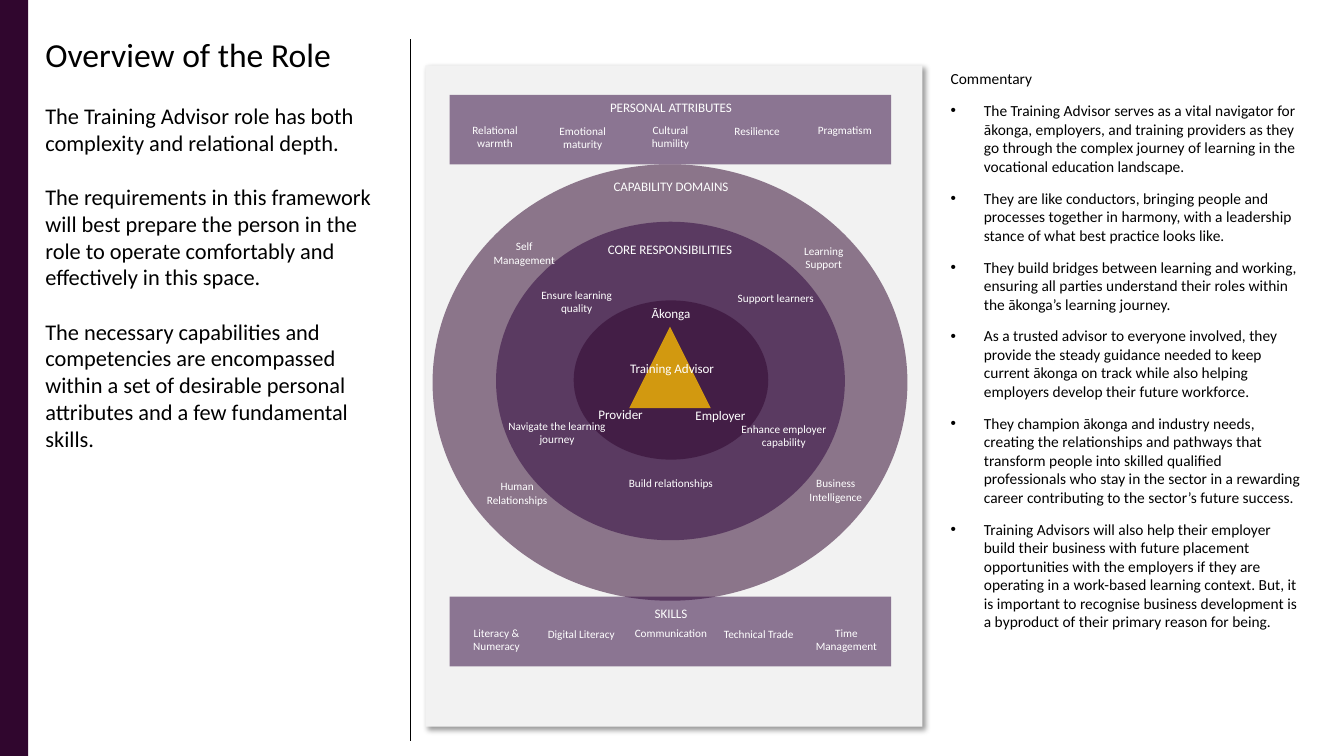
"""Build the Training Advisor role overview slide."""
from lxml import etree
from pptx import Presentation
from pptx import util as u
from pptx.dml.color import RGBColor
from pptx.enum import shapes, text
from pptx.oxml import ns

PX = 9144
FONT = "Calibri"


def add_box(kind, x, y, w, h, colour, alpha=100):
    sp = s.shapes.add_shape(kind, x * PX, y * PX, w * PX, h * PX)
    sp.shadow.inherit = False
    sp.fill.solid()
    sp.fill.fore_color.rgb = RGBColor.from_string(colour)
    sp.line.fill.background()
    if alpha < 100:
        clr = sp.fill._xPr.find(".//" + ns.qn("a:srgbClr"))
        etree.SubElement(clr, ns.qn("a:alpha"), val=str(alpha * 1000))
    return sp


def add_text(x, y, w, h, lines, size, colour="000000", align=text.PP_ALIGN.LEFT):
    sp = s.shapes.add_textbox(x * PX, y * PX, w * PX, h * PX)
    tf = sp.text_frame
    tf.word_wrap = True
    for i, line in enumerate(lines):
        p = tf.add_paragraph() if i else tf.paragraphs[0]
        p.alignment = align
        r = p.add_run()
        r.text = line
        r.font.size = u.Pt(size)
        r.font.name = FONT
        r.font.color.rgb = RGBColor.from_string(colour)
    return tf


prs = Presentation()
prs.slide_width, prs.slide_height = 1333 * PX, 750 * PX
s = prs.slides.add_slide(prs.slide_layouts[6])
RECT, OVAL = shapes.MSO_SHAPE.RECTANGLE, shapes.MSO_SHAPE.OVAL

add_box(RECT, 0, 0, 28, 750, "30062E")
panel = add_box(RECT, 422, 65, 493, 656, "F2F2F2")
effects = panel._element.spPr.find(ns.qn("a:effectLst"))
shadow = etree.SubElement(effects, ns.qn("a:outerShdw"), blurRad=str(u.Pt(4)),
                          dist=str(u.Pt(3)), dir="2700000", algn="tl", rotWithShape="0")
clr = etree.SubElement(shadow, ns.qn("a:srgbClr"), val="000000")
etree.SubElement(clr, ns.qn("a:alpha"), val="40000")

for x, y, w, h, colour in [
    (429, 163, 471, 433, "30062E"),
    (492, 220, 346, 316, "30063E"),
    (569, 298, 193, 158, "30062E"),
]:
    add_box(OVAL, x, y, w, h, colour, 53)

tf = add_text(45, 34, 335, 417, [
    "Overview of the Role",
    "The Training Advisor role has both complexity and relational depth.",
    "The requirements in this framework will best prepare the person in the role "
    "to operate comfortably and effectively in this space.",
    "The necessary capabilities and competencies are encompassed within a set of "
    "desirable personal attributes and a few fundamental skills.",
], 16)
tf.margin_left = tf.margin_right = tf.margin_top = tf.margin_bottom = 0
tf.paragraphs[0].runs[0].font.size = u.Pt(24)
for p in tf.paragraphs[1:]:
    p.space_before = u.Pt(19.5)

tf = add_text(933, 64, 371, 554, [
    "Commentary",
    "The Training Advisor serves as a vital navigator for ākonga, employers, and training "
    "providers as they go through the complex journey of learning in the vocational "
    "education landscape.",
    "They are like conductors, bringing people and processes together in harmony, with a "
    "leadership stance of what best practice looks like.",
    "They build bridges between learning and working, ensuring all parties understand "
    "their roles within the ākonga’s learning journey.",
    "As a trusted advisor to everyone involved, they provide the steady guidance needed to "
    "keep current ākonga on track while also helping employers develop their future workforce.",
    "They champion ākonga and industry needs, creating the relationships and pathways that "
    "transform people into skilled qualified professionals who stay in the sector in a "
    "rewarding career contributing to the sector’s future success.",
    "Training Advisors will also help their employer build their business with future "
    "placement opportunities with the employers if they are operating in a work-based "
    "learning context. But, it is important to recognise business development is a "
    "byproduct of their primary reason for being.",
], 11)
tf.paragraphs[0].space_after = u.Pt(4.8)
for p in tf.paragraphs[1:]:
    p.space_before = p.space_after = u.Pt(4.8)
    pPr = p._p.get_or_add_pPr()
    pPr.set("marL", str(33 * PX))
    pPr.set("indent", str(-33 * PX))
    etree.SubElement(pPr, ns.qn("a:buFont"), typeface="Arial")
    etree.SubElement(pPr, ns.qn("a:buChar"), char="•")

for y in (592, 94):
    add_box(RECT, 446, y, 438, 69, "30063E", 53)

for x, y, w, heading in [
    (568, 235, 193, "CORE RESPONSIBILITIES"),
    (569, 172, 193, "CAPABILITY DOMAINS"),
    (566, 596, 199, "SKILLS"),
    (566, 94, 199, "PERSONAL ATTRIBUTES"),
]:
    add_text(x, y, w, 26, [heading], 9.3, "FDFDFD", text.PP_ALIGN.CENTER)

for x, y, w, h, label in [
    (444, 117, 94, 37, "Relational warmth"),
    (531, 118, 94, 37, "Emotional maturity"),
    (618, 117, 94, 37, "Cultural humility"),
    (704, 118, 94, 24, "Resilience"),
    (791, 117, 94, 24, "Pragmatism"),
    (782, 468, 94, 37, "Business Intelligence"),
    (770, 237, 94, 37, "Learning Support"),
    (460, 471, 106, 37, "Human Relationships"),
    (473, 233, 94, 37, "Self Management"),
    (725, 414, 105, 37, "Enhance employer capability"),
    (514, 281, 116, 37, "Ensure learning quality"),
    (613, 468, 105, 24, "Build relationships"),
    (717, 284, 105, 24, "Support learners"),
    (493, 411, 119, 37, "Navigate the learning journey"),
    (442, 616, 101, 37, "Literacy & Numeracy"),
    (532, 617, 89, 24, "Digital Literacy"),
    (609, 616, 113, 24, "Communication"),
    (702, 617, 101, 24, "Technical Trade"),
    (789, 616, 101, 37, "Time Management"),
]:
    add_text(x, y, w, h, [label], 8, "FFFFFF", text.PP_ALIGN.CENTER)

divider = s.shapes.add_connector(shapes.MSO_CONNECTOR.STRAIGHT,
                                 407 * PX, 39 * PX, 407 * PX, 735 * PX)
divider.line.color.rgb = RGBColor.from_string("000000")
divider.line.width = u.Pt(0.75)
etree.SubElement(divider._element.spPr, ns.qn("a:effectLst"))

add_box(shapes.MSO_SHAPE.ISOSCELES_TRIANGLE, 624, 324, 81, 81, "FFC000", 76)
for x, y, w, party in [
    (609, 298, 113, "Ākonga"),
    (565, 398, 101, "Provider"),
    (664, 399, 101, "Employer"),
    (589, 353, 155, "Training Advisor"),
]:
    add_text(x, y, w, 26, [party], 9.3, "FFFFFF", text.PP_ALIGN.CENTER)

prs.save("out.pptx")
